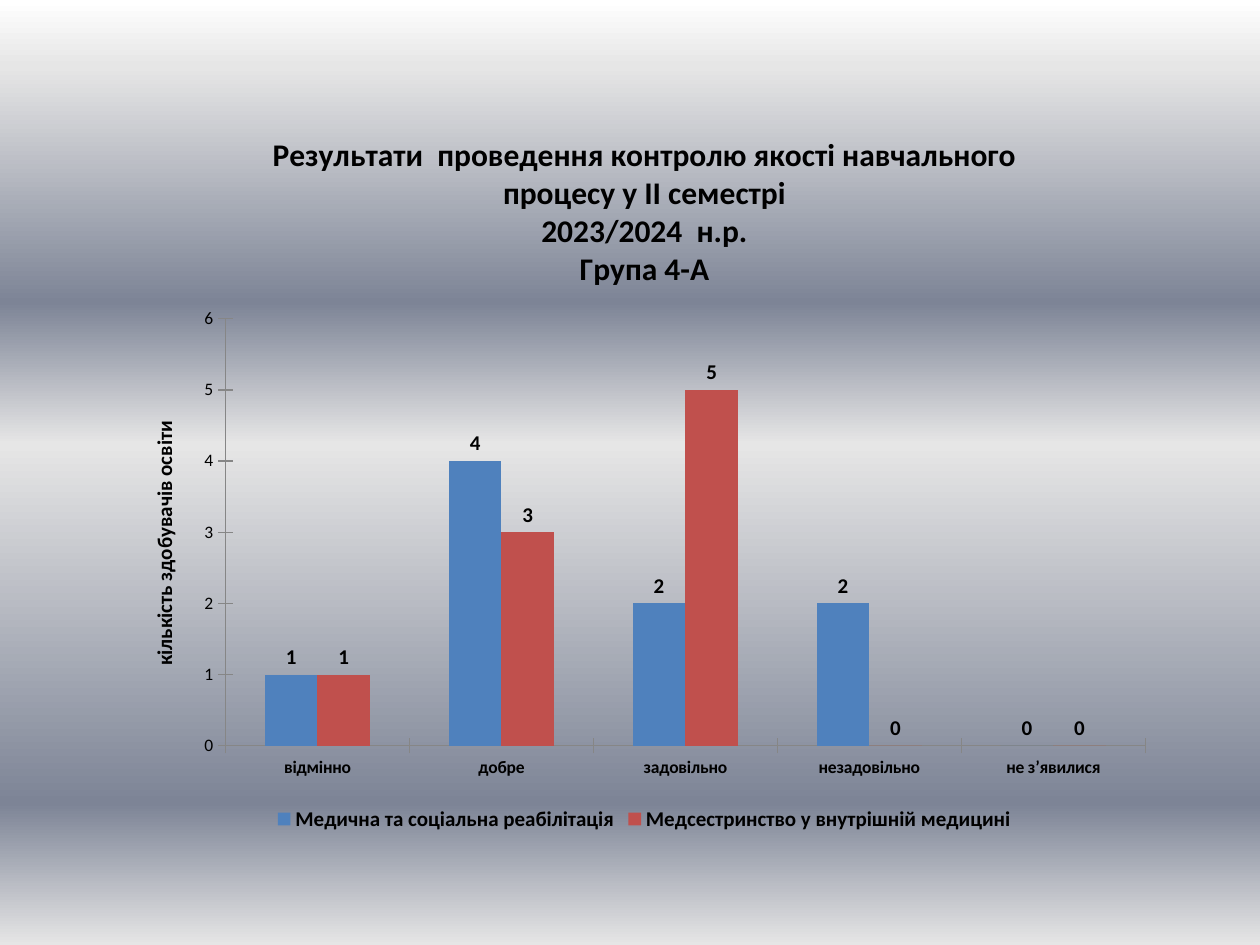
from lxml.etree import SubElement
from pptx import Presentation
from pptx.chart.data import CategoryChartData
from pptx.dml.color import RGBColor
from pptx.enum.chart import XL_CHART_TYPE, XL_LABEL_POSITION, XL_LEGEND_POSITION, XL_TICK_MARK
from pptx.oxml import parse_xml
from pptx.oxml.ns import nsdecls, qn
from pptx.util import Inches, Pt

TITLE = [
    "Результати  проведення контролю якості навчального процесу у ІІ семестрі",
    "2023/2024  н.р.",
    "Група 4-А",
]
VALUE_TITLE = "кількість здобувачів освіти"
GRADES = ["відмінно", "добре", "задовільно", "незадовільно", "не з’явилися"]
SUBJECTS = [
    ("Медична та соціальна реабілітація", "blue", (1, 4, 2, 2, 0)),
    ("Медсестринство у внутрішній медицині", "red", (1, 3, 5, 0, 0)),
]
COLORS = {
    "white": "FFFFFF", "light": "E6E6E6", "slate": "7D8496",
    "blue": "4F81BD", "red": "C0504D", "text": "000000", "axis": "868686",
}
BACKGROUND = [(0, "white"), (7, "light"), (32, "slate"),
              (47, "light"), (85, "slate"), (100, "light")]
CHART_BOX = (0.98, 0.86, 8.27, 5.78)
PLOT_BOX = (1.79, 2.53, 7.3, 3.39)


def rgb(name):
    return RGBColor.from_string(COLORS[name])


def style(font, size, bold=False):
    formats = {"name": "Calibri", "size": Pt(size), "bold": bold}
    for key, value in formats.items():
        setattr(font, key, value)
    font.color.rgb = rgb("text")


def write_title(frame, lines, size):
    for index, line in enumerate(lines):
        para = frame.paragraphs[0] if index == 0 else frame.add_paragraph()
        span = para.add_run()
        span.text = line
        style(span.font, size, True)


def paint_background(page):
    fill = page.background.fill
    fill.gradient()
    stops = "".join(
        f'<a:gs pos="{percent * 1000}"><a:srgbClr val="{COLORS[name]}"/></a:gs>'
        for percent, name in BACKGROUND)
    gradient = parse_xml(
        f'<a:gradFill {nsdecls("a")} rotWithShape="1"><a:gsLst>{stops}</a:gsLst>'
        '<a:lin ang="5400000" scaled="0"/></a:gradFill>')
    old = page.background._cSld.find(".//" + qn("a:gradFill"))
    old.getparent().replace(old, gradient)


def place_plot(chart):
    """Fix the inner plot area, as fractions of the chart frame."""
    area = chart._chartSpace.chart.plotArea
    for old in area.findall(qn("c:layout")):
        area.remove(old)
    layout = parse_xml(f'<c:layout {nsdecls("c")}/>')
    manual = SubElement(layout, qn("c:manualLayout"))
    left, top, width, height = CHART_BOX
    x, y, w, h = PLOT_BOX
    settings = {
        "layoutTarget": "inner", "xMode": "edge", "yMode": "edge",
        "x": (x - left) / width, "y": (y - top) / height,
        "w": w / width, "h": h / height,
    }
    for key, value in settings.items():
        SubElement(manual, qn(f"c:{key}")).set("val", str(value))
    area.insert(0, layout)


def format_axes(chart):
    for axis, bold in ((chart.category_axis, True), (chart.value_axis, False)):
        axis.has_major_gridlines = False
        axis.major_tick_mark = XL_TICK_MARK.CROSS
        axis.format.line.color.rgb = rgb("axis")
        axis.format.line.width = Pt(0.75)
        style(axis.tick_labels.font, 10, bold)
    values = chart.value_axis
    for key, value in {"minimum_scale": 0, "maximum_scale": 6, "major_unit": 1}.items():
        setattr(values, key, value)
    write_title(values.axis_title.text_frame, [VALUE_TITLE], 12)


def format_series(plot):
    plot.gap_width = 150
    plot.overlap = 0
    plot.vary_by_categories = False
    for series, (_, color, _) in zip(plot.series, SUBJECTS):
        series.format.fill.solid()
        series.format.fill.fore_color.rgb = rgb(color)
        labels = series.data_labels
        labels.show_value = True
        labels.position = XL_LABEL_POSITION.OUTSIDE_END
        style(labels.font, 12, True)


def add_results_chart(page):
    data = CategoryChartData()
    data.categories = GRADES
    for name, _, counts in SUBJECTS:
        data.add_series(name, counts)
    chart = page.shapes.add_chart(
        XL_CHART_TYPE.COLUMN_CLUSTERED, *map(Inches, CHART_BOX), data).chart
    style(chart.font, 10)
    chart.has_title = True
    write_title(chart.chart_title.text_frame, TITLE, 18)
    chart.chart_title.include_in_layout = False
    chart.has_legend = True
    chart.legend.position = XL_LEGEND_POSITION.BOTTOM
    chart.legend.include_in_layout = False
    style(chart.legend.font, 12, True)
    format_axes(chart)
    format_series(chart.plots[0])
    place_plot(chart)


def main():
    deck = Presentation()
    deck.slide_width, deck.slide_height = Inches(10), Inches(7.5)
    page = deck.slides.add_slide(deck.slide_layouts[6])
    paint_background(page)
    add_results_chart(page)
    deck.save("out.pptx")


if __name__ == "__main__":
    main()
